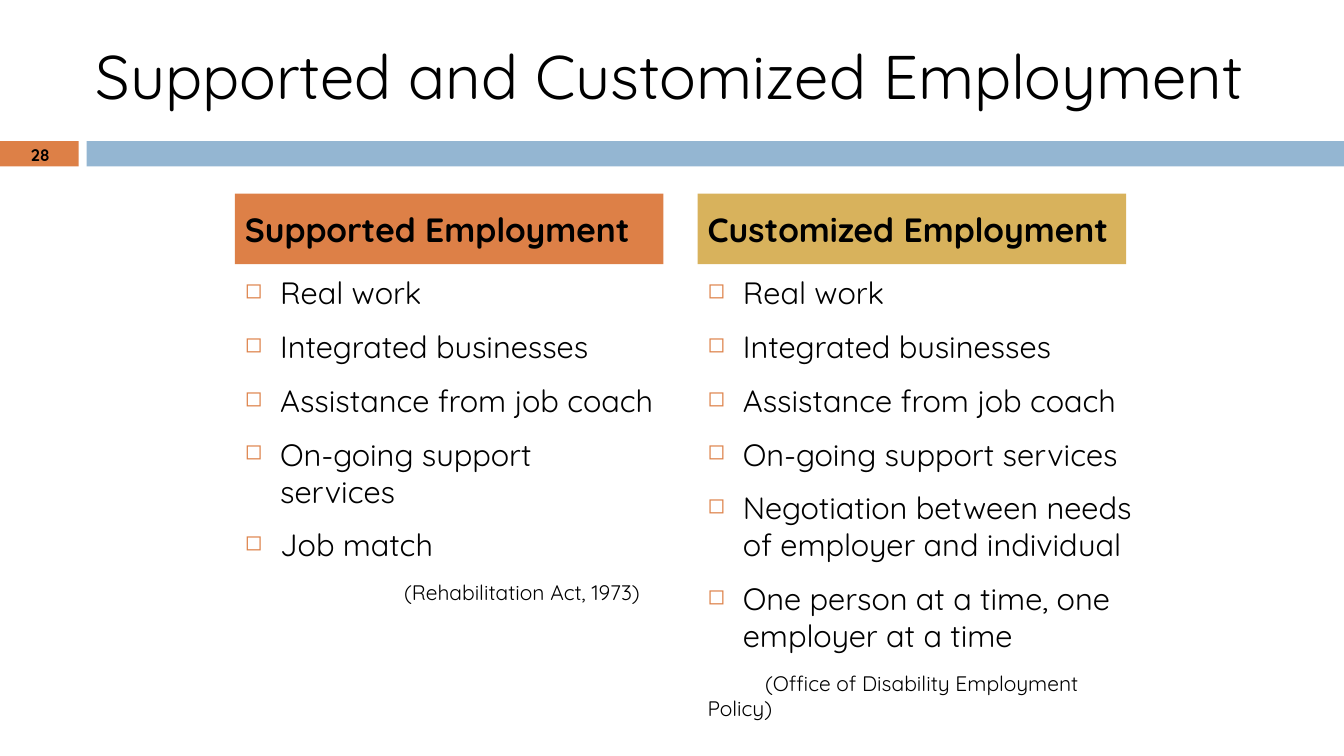
import pptx
import pptx.dml.color
import pptx.enum.shapes
import pptx.enum.text
import pptx.oxml
import pptx.oxml.ns
import pptx.util
from pptx.util import Inches

FONT = "Quicksand"
COLORS = {
    "text": "000000",
    "orange": "DD8047",
    "blue": "94B6D2",
    "gold": "D8B25C",
}
ALIGN = pptx.enum.text.PP_ALIGN
MIDDLE = pptx.enum.text.MSO_ANCHOR.MIDDLE

SHARED = [
    "Real work",
    "Integrated businesses",
    "Assistance from job coach",
    "On-going support services",
]
COLUMNS = [
    {
        "heading": "Supported Employment",
        "color": "orange",
        "left": 2.33,
        "size": (4.25, 4.17),
        "points": SHARED + ["Job match"],
        "citation": "(Rehabilitation Act, 1973)",
        "margin": 1.58,
        "indent": 0,
    },
    {
        "heading": "Customized Employment",
        "color": "gold",
        "left": 6.92,
        "size": (4.5, 4.58),
        "points": SHARED + [
            "Negotiation between needs of employer and individual",
            "One person at a time, one employer at a time",
        ],
        "citation": "(Office of Disability Employment Policy)",
        "margin": 0,
        "indent": 0.57,
    },
]

deck = pptx.Presentation()
deck.slide_width = Inches(13.33)
deck.slide_height = Inches(7.5)
page = deck.slides.add_slide(deck.slide_layouts[6])


def add_bar(left, top, width, height, color):
    bar = page.shapes.add_shape(
        pptx.enum.shapes.MSO_SHAPE.RECTANGLE,
        Inches(left), Inches(top), Inches(width), Inches(height))
    bar.shadow.inherit = False
    bar.fill.solid()
    bar.fill.fore_color.rgb = pptx.dml.color.RGBColor.from_string(COLORS[color])
    bar.line.fill.background()
    return bar


def write(para, text, size, bold=False, align=ALIGN.LEFT):
    para.text = text
    para.alignment = align
    para.font.name = FONT
    para.font.size = pptx.util.Pt(size)
    para.font.bold = bold
    para.font.color.rgb = pptx.dml.color.RGBColor.from_string(COLORS["text"])


add_bar(0, 1.4, 0.78, 0.25, "orange")
add_bar(0.86, 1.4, 12.47, 0.25, "blue")

title = page.shapes.add_textbox(Inches(0.85), Inches(0.31), Inches(12.05), Inches(0.95))
title.text_frame.word_wrap = True
title.text_frame.vertical_anchor = MIDDLE
title.text_frame.paragraphs[0].line_spacing = 0.91
write(title.text_frame.paragraphs[0], "Supported and Customized Employment", 44)

for column in COLUMNS:
    width, height = column["size"]
    box = page.shapes.add_textbox(
        Inches(column["left"]), Inches(2.67), Inches(width), Inches(height))
    frame = box.text_frame
    frame.word_wrap = True

    for index, point in enumerate(column["points"]):
        para = frame.add_paragraph() if index else frame.paragraphs[0]
        if index:
            para.space_before = pptx.util.Pt(12)
        settings = para._p.get_or_add_pPr()
        settings.set("marL", str(Inches(0.35)))
        settings.set("indent", str(Inches(-0.35)))
        namespace = pptx.oxml.ns.nsdecls("a")
        for bullet in (
            f'<a:buClr {namespace}><a:srgbClr val="{COLORS["orange"]}"/></a:buClr>',
            f'<a:buSzPct {namespace} val="70000"/>',
            f'<a:buChar {namespace} char="◻"/>',
        ):
            settings.append(pptx.oxml.parse_xml(bullet))
        write(para, point, 22)

    citation = frame.add_paragraph()
    citation.space_before = pptx.util.Pt(12)
    settings = citation._p.get_or_add_pPr()
    settings.set("marL", str(Inches(column["margin"])))
    settings.set("indent", str(Inches(column["indent"])))
    write(citation, column["citation"], 15)

    heading = add_bar(column["left"], 1.92, 4.25, 0.7, column["color"])
    heading.text_frame.word_wrap = True
    heading.text_frame.vertical_anchor = MIDDLE
    write(heading.text_frame.paragraphs[0], column["heading"], 24, bold=True)

number = page.shapes.add_textbox(Inches(0.11), Inches(1.42), Inches(0.58), Inches(0.27))
number.text_frame.word_wrap = True
number.text_frame.vertical_anchor = MIDDLE
number.text_frame.paragraphs[0].line_spacing = 0.8
write(number.text_frame.paragraphs[0], "28", 12, bold=True, align=ALIGN.CENTER)

deck.save("out.pptx")
